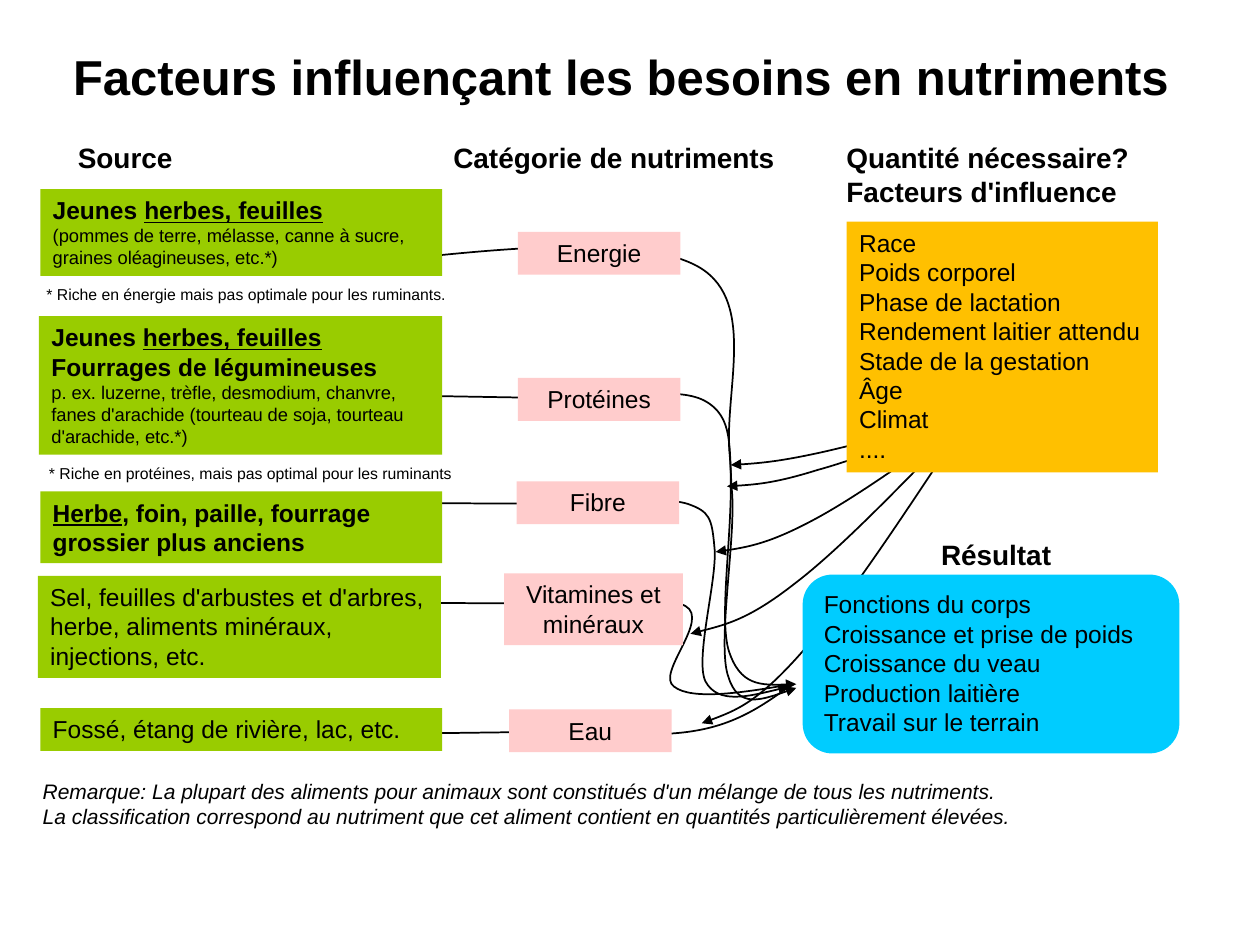
from lxml.etree import SubElement
from pptx import Presentation
from pptx.dml.color import RGBColor
from pptx.enum.shapes import MSO_SHAPE
from pptx.enum.text import MSO_ANCHOR, MSO_AUTO_SIZE, PP_ALIGN
from pptx.oxml.ns import qn
from pptx.util import Inches, Pt

COLS, ROWS = 100, 75
HUES = {"ink": "000000", "source": "99CC00", "food": "FFCCCC",
        "factor": "FFC000", "result": "00CCFF"}
BOLD, LINK, NOTE = {"bold": True}, {"bold": True, "underline": True}, {"size": 10.5}


class Sheet:
    font = "Arial"

    def __init__(self):
        self.deck = Presentation()
        self.deck.slide_width, self.deck.slide_height = Inches(10), Inches(7.5)
        self.slide = self.deck.slides.add_slide(self.deck.slide_layouts[6])
        self.col = self.deck.slide_width / COLS
        self.row = self.deck.slide_height / ROWS

    def hue(self, name):
        return RGBColor.from_string(HUES[name])

    def place(self, x, y, w, h):
        return [round(v) for v in (x * self.col, y * self.row, w * self.col, h * self.row)]

    def letter(self, shape, lines, size, align=PP_ALIGN.LEFT, wrap=True, **look):
        frame = shape.text_frame
        frame.word_wrap = wrap
        frame.auto_size = MSO_AUTO_SIZE.SHAPE_TO_FIT_TEXT
        frame.vertical_anchor = MSO_ANCHOR.TOP
        for i, line in enumerate(lines):
            para = frame.add_paragraph() if i else frame.paragraphs[0]
            para.alignment = align
            for text, style in [(line, {})] if isinstance(line, str) else line:
                run = para.add_run()
                run.text = text
                mix = {"size": size, **look, **style}
                font = run.font
                font.name, font.size = self.font, Pt(mix["size"])
                font.color.rgb = self.hue("ink")
                font.bold = mix.get("bold", False)
                font.italic = mix.get("italic", False)
                font.underline = mix.get("underline", False)
        return frame

    def label(self, spot, lines, size=16, **look):
        box = self.slide.shapes.add_textbox(*self.place(*spot))
        return self.letter(box, lines, size, **look)

    def title(self, spot, text):
        frame = self.label(spot, [text], 28, bold=True)
        frame.auto_size = MSO_AUTO_SIZE.NONE
        frame.vertical_anchor = MSO_ANCHOR.MIDDLE
        frame.margin_left = frame.margin_top = 0

    def box(self, spot, hue, lines, kind=MSO_SHAPE.RECTANGLE, **look):
        shape = self.slide.shapes.add_shape(kind, *self.place(*spot))
        shape.shadow.inherit = False
        shape.fill.solid()
        shape.fill.fore_color.rgb = self.hue(hue)
        shape.line.fill.background()
        self.letter(shape, lines, 14, **look)

    def curve(self, points, arrow=True):
        spots = [(round(x * self.col), round(y * self.row)) for x, y in points]
        pen = self.slide.shapes.build_freeform(*spots[0])
        pen.add_line_segments(spots[1:], close=False)
        shape = pen.convert_to_shape()
        shape.shadow.inherit = False
        shape.fill.background()
        shape.line.color.rgb = self.hue("ink")
        shape.line.width = Pt(1)
        track = next(shape.element.iter(qn("a:path")))
        steps = track.findall(qn("a:lnTo"))
        steps = steps[len(steps) % 3:]
        for i in range(0, len(steps), 3):
            bend = SubElement(track, qn("a:cubicBezTo"))
            for step in steps[i:i + 3]:
                bend.append(step[0])
                track.remove(step)
        if arrow:
            edge = next(shape.element.iter(qn("a:ln")))
            SubElement(edge, qn("a:tailEnd"), type="triangle")


def main():
    sheet = Sheet()

    flows = [
        ([(26.4, 58.3), (42.1, 58.1), (46.9, 58.1), (51.8, 58.6), (55.2, 58),
          (58.7, 57.4), (60.8, 55.8), (62.9, 54.3)], False),
        ([(25.8, 47.8), (41.2, 47.9), (45.9, 47.9), (52.3, 47), (54.4, 48.1),
          (56.4, 49.2), (52, 53.5), (53.5, 54.5), (54.9, 55.6), (58.9, 55),
          (62.9, 54.3)], False),
        ([(25.8, 39.9), (46.9, 40), (51.7, 40), (53, 39.5), (54.6, 40),
          (56.3, 40.6), (56.5, 41.1), (56.7, 43.4), (57, 45.8), (55.1, 52.3),
          (56, 54.1), (57, 55.9), (59.8, 55.2), (62.6, 54.5)], True),
        ([(26.3, 31.3), (43.9, 31.6), (48.8, 31.7), (53.6, 30.6), (55.9, 31.8),
          (58.3, 33.1), (57.8, 35.5), (58.1, 39.1), (58.4, 42.8), (56.9, 51.2),
          (57.8, 53.7), (58.6, 56.3), (60.9, 55.4), (63.2, 54.6)], True),
        ([(27.2, 21.1), (38.6, 19.8), (50, 18.5), (55.1, 21), (60.2, 23.5),
          (57.5, 30.8), (57.9, 35.9), (58.4, 40.9), (57, 48.4), (57.8, 51.5),
          (58.7, 54.5), (60.9, 54.4), (63.2, 54.3)], True),
    ]
    for points, arrow in flows:
        sheet.curve(points, arrow)

    drives = [
        [(77, 32.7), (72.7, 34), (68.3, 35.2), (65.2, 35.9), (62, 36.6), (60, 36.8), (58, 36.9)],
        [(77, 32.9), (72.6, 34.6), (68.2, 36.4), (64.9, 37.3), (61.7, 38.3), (59.7, 38.5), (57.7, 38.6)],
        [(77.1, 32.9), (72.5, 36.2), (67.9, 39.5), (64.5, 41.3), (61.1, 43.1), (59, 43.5), (56.8, 43.8)],
        [(77, 32.9), (71.9, 38.1), (66.9, 43.4), (63.1, 46.3), (59.4, 49.2), (57.1, 49.7), (54.8, 50.3)],
        [(77, 32.9), (72.1, 40.3), (67.3, 47.7), (63.7, 51.7), (60.1, 55.8), (57.9, 56.6), (55.7, 57.4)],
    ]
    for points in drives:
        sheet.curve(points)

    sheet.title((5.8, 2.5, 90.2, 7.6), "Facteurs influençant les besoins en nutriments")

    heads = [
        ((5.2, 10.7, 9.6, 3.7), ["Source"]),
        ((35, 10.7, 28.4, 3.7), ["Catégorie de nutriments"]),
        ((66.2, 10.7, 24.7, 6.4), ["Quantité nécessaire?", "Facteurs d'influence"]),
        ((73.7, 42.2, 10.8, 3.7), ["Résultat"]),
    ]
    for spot, lines in heads:
        sheet.label(spot, lines, bold=True, wrap=False)

    young = [("Jeunes ", BOLD), ("herbes, feuilles", LINK)]
    sources = [
        ((3.2, 15, 31.9, 6.9), [young, [
            ("(pommes de terre, mélasse, canne à sucre, graines oléagineuses, etc.*)", NOTE)]]),
        ((3.1, 25.1, 32, 11), [young, [("Fourrages de légumineuses", BOLD)], [
            ("p. ex. luzerne, trèfle, desmodium, chanvre, fanes d'arachide "
             "(tourteau de soja, tourteau d'arachide, etc.*)", NOTE)]]),
        ((3.2, 39, 31.9, 5.7), [[
            ("Herbe", LINK), (", foin, paille, fourrage grossier plus anciens", BOLD)]]),
        ((3, 45.7, 32, 8.1), [
            "Sel, feuilles d'arbustes et d'arbres, herbe, aliments minéraux, injections, etc."]),
        ((3.2, 56.2, 31.9, 3.4), ["Fossé, étang de rivière, lac, etc."]),
    ]
    for spot, lines in sources:
        sheet.box(spot, "source", lines)

    foods = [
        ((41.1, 18.4, 12.9, 3.4), "Energie"),
        ((41.1, 30, 12.9, 3.4), "Protéines"),
        ((41, 38.2, 12.9, 3.4), "Fibre"),
        ((40, 45.5, 14.2, 5.7), "Vitamines et minéraux"),
        ((40.4, 56.3, 12.9, 3.4), "Eau"),
    ]
    for spot, name in foods:
        sheet.box(spot, "food", [name], align=PP_ALIGN.CENTER)

    sheet.box((67.2, 17.6, 24.7, 19.9), "factor", [
        "Race", "Poids corporel", "Phase de lactation", "Rendement laitier attendu",
        "Stade de la gestation", "Âge", "Climat", "...."])
    sheet.box((63.7, 45.6, 29.9, 14.2), "result", [
        "Fonctions du corps", "Croissance et prise de poids", "Croissance du veau",
        "Production laitière", "Travail sur le terrain"], MSO_SHAPE.ROUNDED_RECTANGLE)

    sheet.label((2.7, 22.1, 47.1, 2.5), [
        "* Riche en énergie mais pas optimale pour les ruminants."], 9)
    sheet.label((2.9, 36.3, 35.3, 2.5), [
        "* Riche en protéines, mais pas optimal pour les ruminants"], 9)
    sheet.label((2.4, 61.3, 88.5, 5), [
        "Remarque: La plupart des aliments pour animaux sont constitués d'un mélange "
        "de tous les nutriments.",
        "La classification correspond au nutriment que cet aliment contient en quantités "
        "particulièrement élevées."], 12, italic=True)

    sheet.deck.save("out.pptx")


if __name__ == "__main__":
    main()
